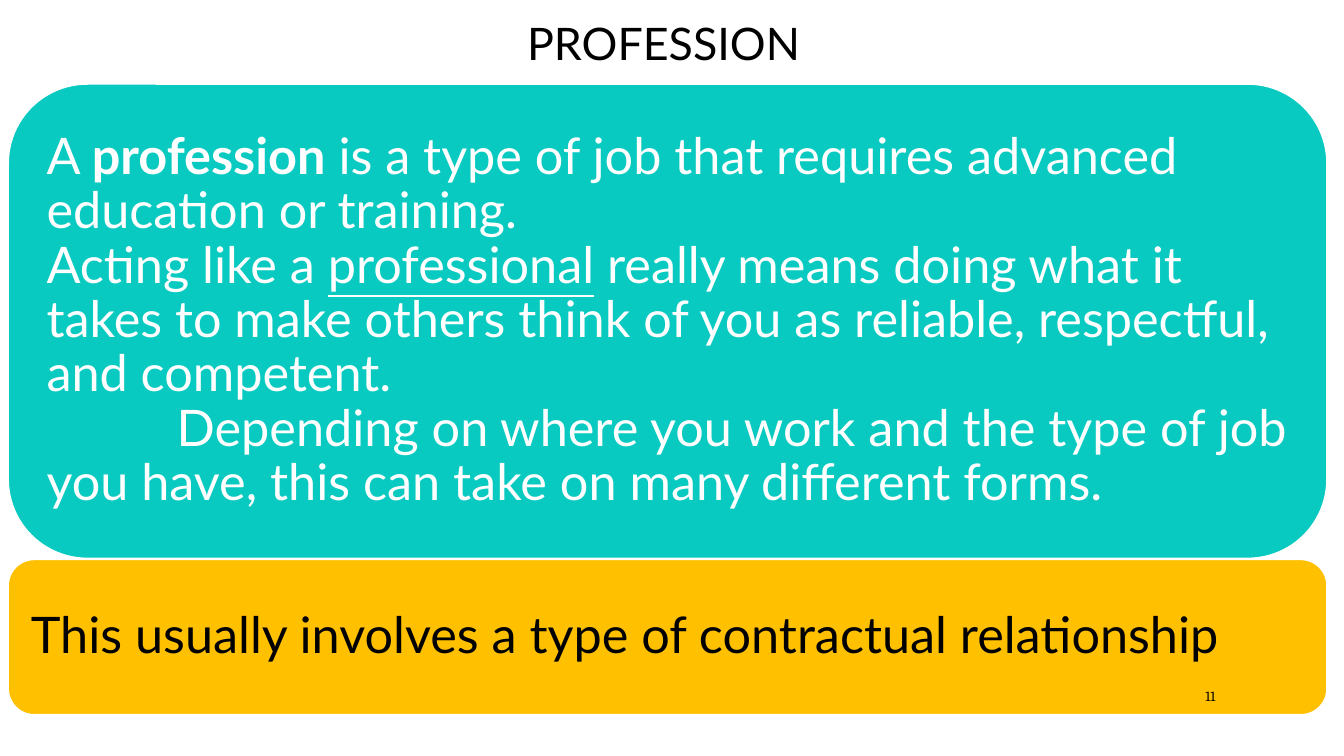
from pptx import Presentation
from pptx.dml.color import RGBColor
from pptx.enum.shapes import MSO_SHAPE as Shape
from pptx.enum.text import MSO_ANCHOR as Anchor, MSO_AUTO_SIZE as AutoSize, PP_ALIGN as Align
from pptx.util import Cm, Pt


def color(hex_string):
    """Turn a hex string into a colour."""
    return RGBColor.from_string(hex_string)


class SlideBuilder:
    """Hold the style and the current slide."""

    FONT = "Lato"
    NUMBER_FONT = "Cambria"
    BLACK = "000000"
    WHITE = "FFFFFF"
    TEAL = "08CAC1"
    AMBER = "FFC000"

    def __init__(self, presentation):
        """Add a title-only slide."""
        self.slide = presentation.slides.add_slide(presentation.slide_layouts[5])

    def style(self, font, size, hex_string, name=FONT):
        """Set the typeface, size and colour of a font."""
        font.name = name
        font.size = Pt(size)
        font.color.rgb = color(hex_string)

    def title(self, text, left, top, width, height):
        """Fill and place the title placeholder."""
        shape = self.slide.shapes.title
        shape.left, shape.top, shape.width, shape.height = map(Cm, (left, top, width, height))
        frame = shape.text_frame
        frame.text = text
        frame.auto_size = AutoSize.NONE
        frame.vertical_anchor = Anchor.BOTTOM
        paragraph = frame.paragraphs[0]
        paragraph.alignment = Align.CENTER
        paragraph.line_spacing = 0.9
        self.style(paragraph.runs[0].font, 32, self.BLACK)

    def panel(self, paragraphs, top, height, fill, text_color):
        """Add a rounded panel with paragraphs made of (text, emphasis) runs."""
        shape = self.slide.shapes.add_shape(
            Shape.ROUNDED_RECTANGLE, Cm(0.21), Cm(top), Cm(33.23), Cm(height))
        shape.shadow.inherit = False
        shape.fill.solid()
        shape.fill.fore_color.rgb = color(fill)
        shape.line.color.rgb = color(self.WHITE)
        shape.line.width = Pt(1)
        frame = shape.text_frame
        frame.word_wrap = True
        frame.vertical_anchor = Anchor.MIDDLE
        frame.margin_left = frame.margin_top = frame.margin_bottom = Cm(0.38)
        frame.margin_right = Cm(0.3)
        for index, runs in enumerate(paragraphs):
            paragraph = frame.add_paragraph() if index else frame.paragraphs[0]
            paragraph.alignment = Align.LEFT
            paragraph.line_spacing = 0.9
            for text, emphasis in runs:
                run = paragraph.add_run()
                run.text = text
                self.style(run.font, 36, text_color)
                run.font.bold = emphasis == "bold"
                run.font.underline = emphasis == "underline"
        return shape

    def indent_first_line(self, paragraph, indent):
        """Indent the first line of a paragraph."""
        properties = paragraph._p.get_or_add_pPr()
        properties.set("marL", "0")
        properties.set("indent", str(Cm(indent)))

    def page_number(self, text, left, top, width, height):
        """Add the page number, aligned right."""
        box = self.slide.shapes.add_textbox(Cm(left), Cm(top), Cm(width), Cm(height))
        frame = box.text_frame
        frame.word_wrap = True
        frame.vertical_anchor = Anchor.MIDDLE
        frame.text = text
        paragraph = frame.paragraphs[0]
        paragraph.alignment = Align.RIGHT
        self.style(paragraph.runs[0].font, 10, self.BLACK, self.NUMBER_FONT)


def main():
    """Build and save the slide."""
    presentation = Presentation()
    presentation.slide_width = Cm(33.87)
    presentation.slide_height = Cm(19.05)
    builder = SlideBuilder(presentation)
    builder.title("PROFESSION", 3.39, 0, 26.67, 1.9)
    definition = builder.panel([
        [("A ", ""), ("profession", "bold"),
         (" is a type of job that requires advanced education or training.", "")],
        [("Acting like a ", ""), ("professional", "underline"),
         (" really means doing what it takes to make others think of you as "
          "reliable, respectful, and competent.", "")],
        [("Depending on where you work and the type of job you have, "
          "this can take on many different forms.", "")],
    ], 2.12, 11.95, builder.TEAL, builder.WHITE)
    builder.indent_first_line(definition.text_frame.paragraphs[2], 3.28)
    builder.panel([[("This usually involves a type of contractual relationship", "")]],
                  14.1, 3.91, builder.AMBER, builder.BLACK)
    builder.page_number("11", 28.14, 17.15, 2.74, 0.76)
    presentation.save("out.pptx")


if __name__ == "__main__":
    main()
